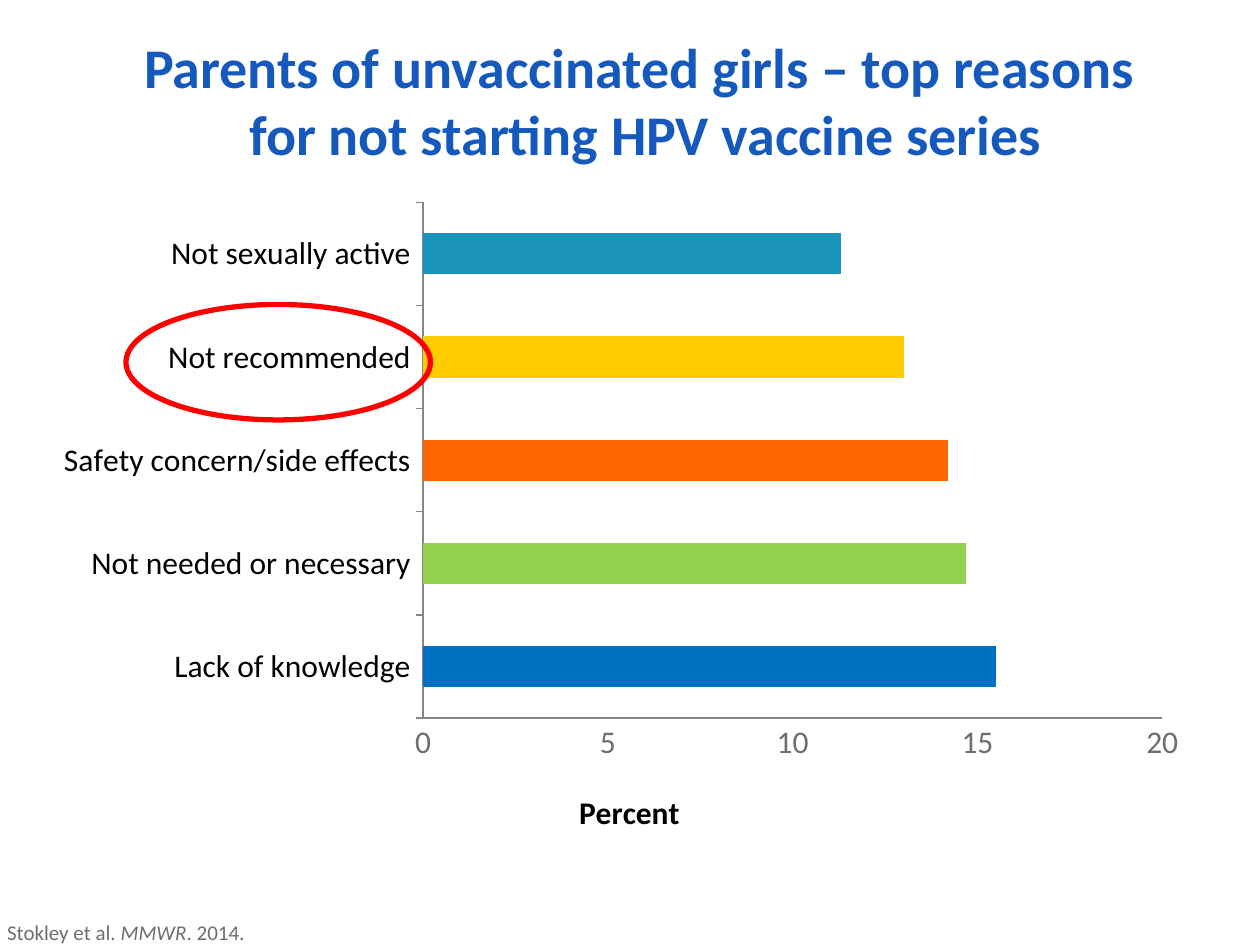
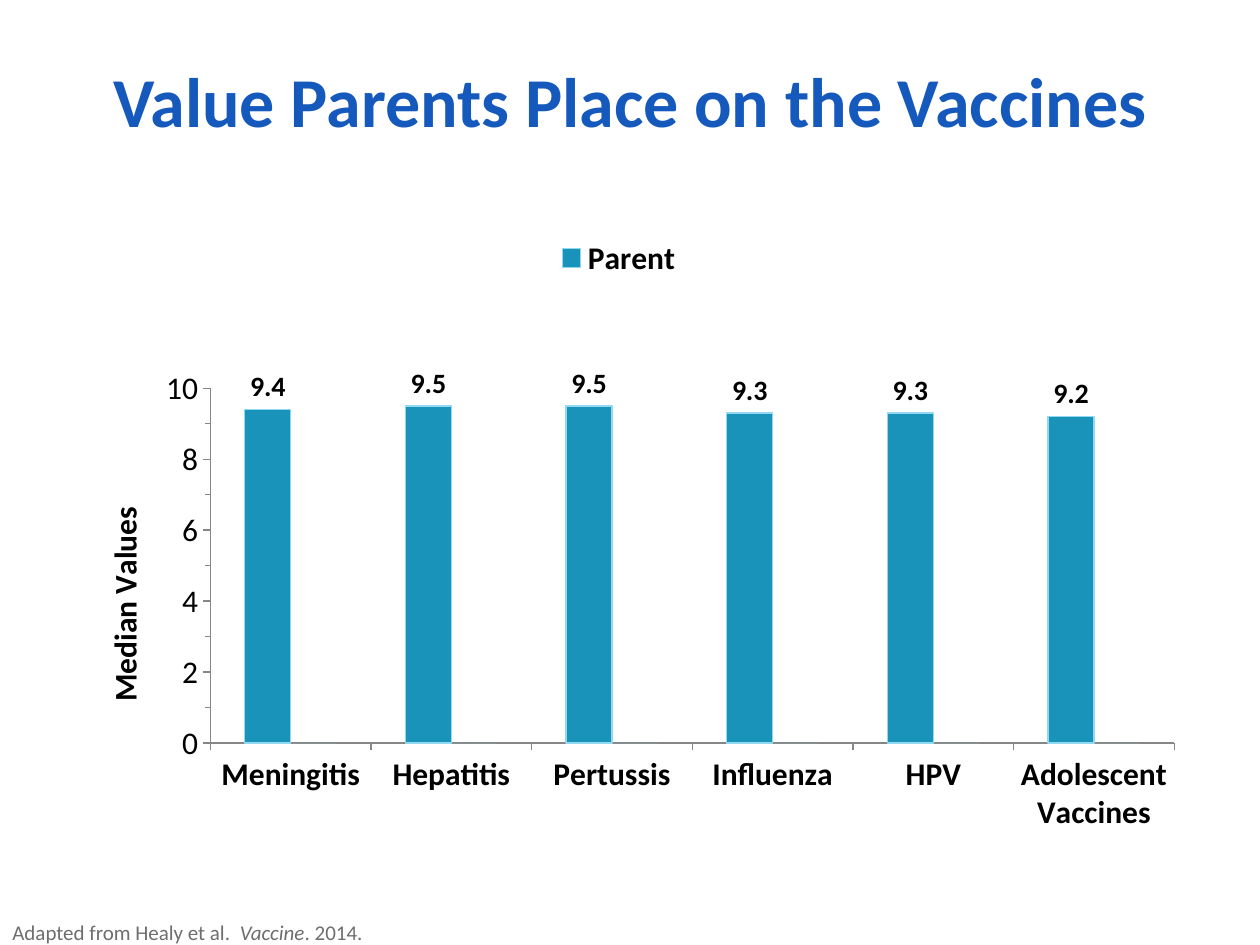
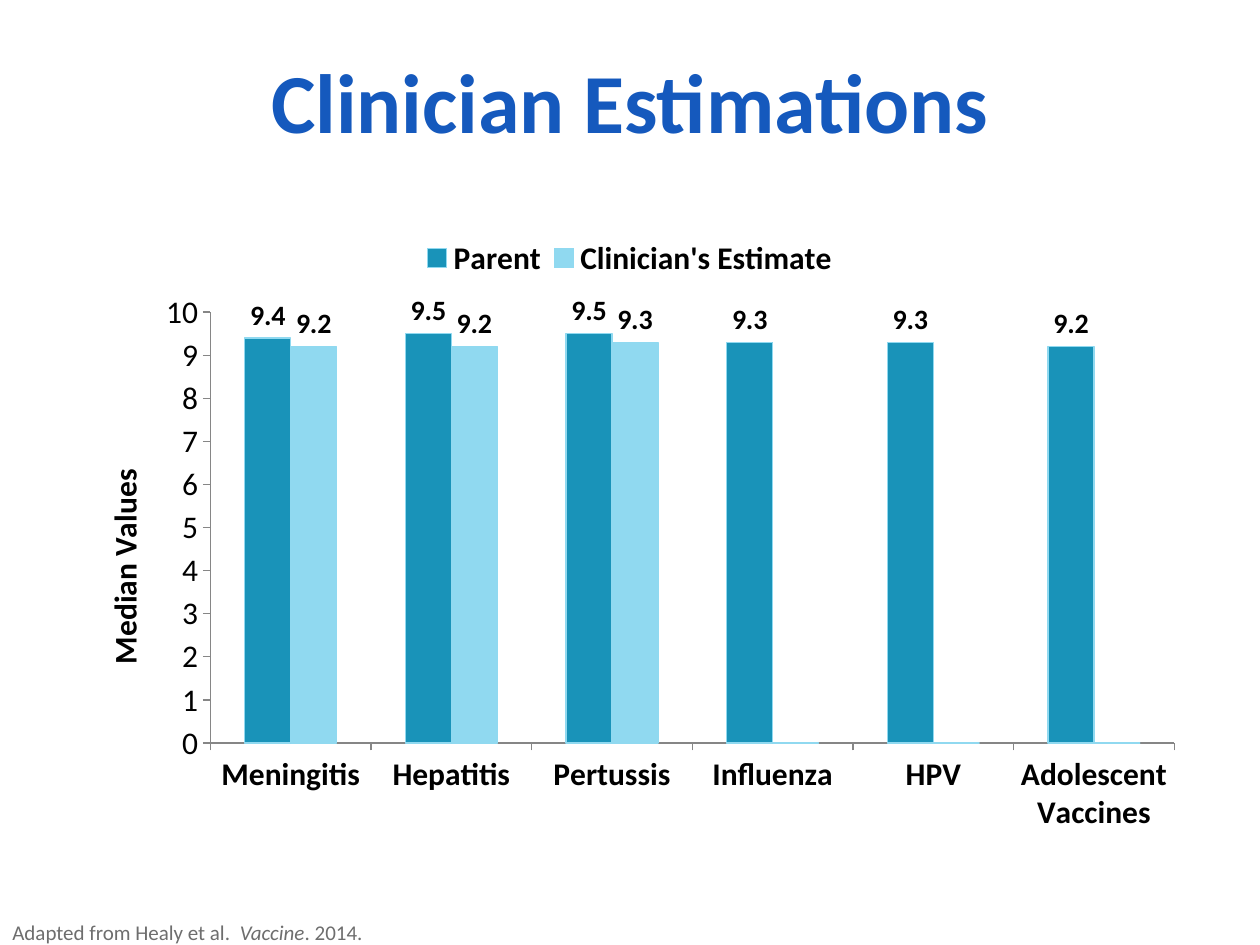
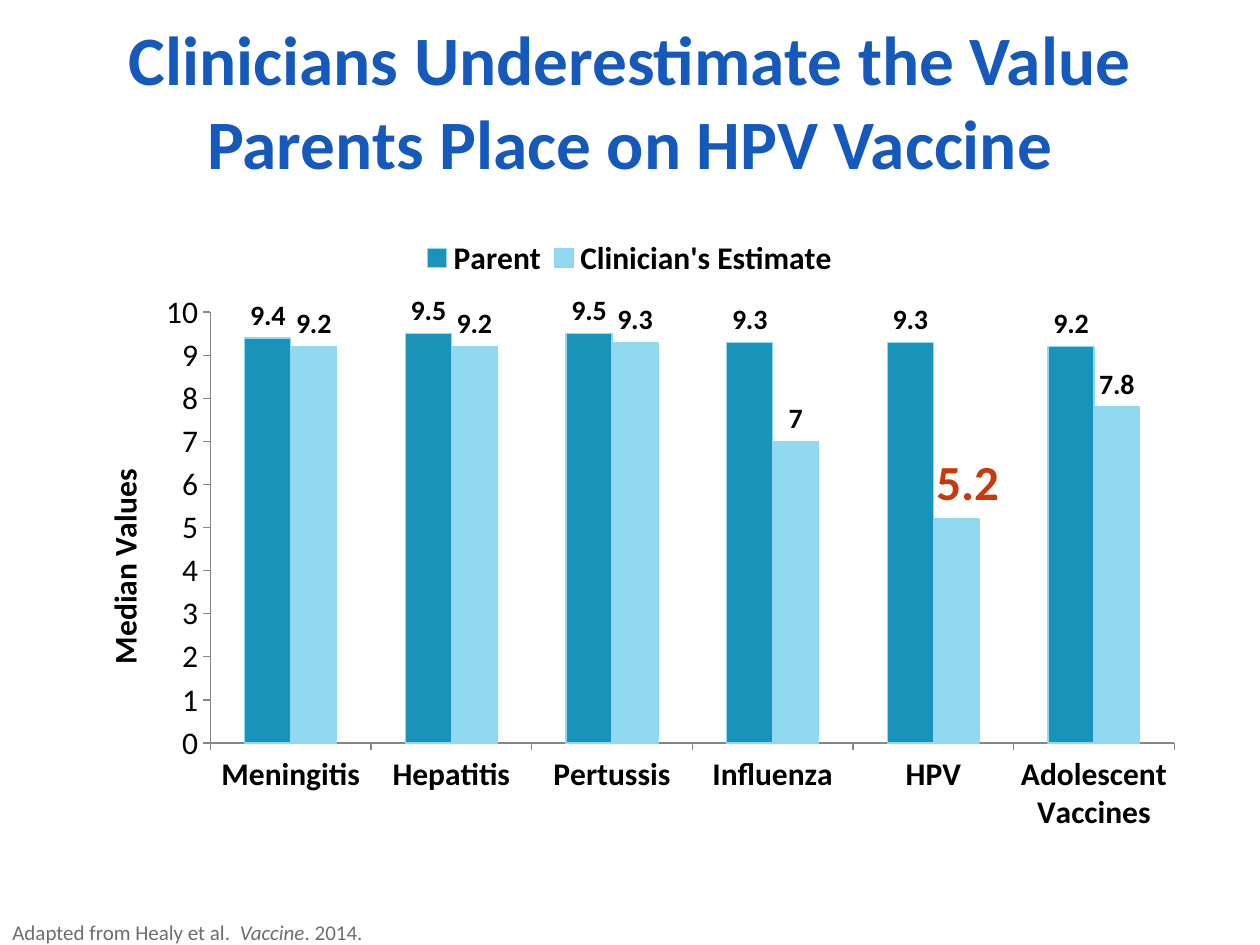
from lxml.etree import QName
from pptx import Presentation
from pptx.chart.data import CategoryChartData
from pptx.dml.color import RGBColor
from pptx.enum.chart import XL_CHART_TYPE, XL_LABEL_POSITION, XL_LEGEND_POSITION, XL_TICK_MARK
from pptx.enum.shapes import MSO_SHAPE
from pptx.enum.text import MSO_ANCHOR, PP_ALIGN
from pptx.oxml import parse_xml
from pptx.oxml.ns import nsdecls
from pptx.util import Pt

FONT = "Calibri"
COLORS = {
    "title": "1559BD",
    "text": "000000",
    "muted": "6E6E6E",
    "axis": "868686",
    "parent": "1993B9",
    "clinician": "90D9F0",
    "highlight": "FF0000",
    "low_value": "C8390B",
}
REASONS = [
    ("Lack of knowledge", 15.5, "0070C0"),
    ("Not needed or necessary", 14.7, "92D050"),
    ("Safety concern/side effects", 14.2, "FF6600"),
    ("Not recommended", 13, "FFCC00"),
    ("Not sexually active", 11.3, "1993B9"),
]
VACCINES = ["Meningitis", "Hepatitis", "Pertussis", "Influenza", "HPV", "Adolescent Vaccines"]
PARENT_VALUES = [9.4, 9.5, 9.5, 9.3, 9.3, 9.2]
HPV = VACCINES.index("HPV")
HEALY = ("Adapted from Healy et al.  ", "Vaccine", ". 2014.")


def rgb(name):
    return RGBColor.from_string(COLORS.get(name, name))


def style_font(font, size, color="text", bold=False, italic=False):
    font.name = FONT
    font.size = Pt(size)
    font.bold = bold
    font.italic = italic
    font.color.rgb = rgb(color)


def add_text_box(slide, left, top, width, height):
    box = slide.shapes.add_textbox(Pt(left), Pt(top), Pt(width), Pt(height))
    box.text_frame.word_wrap = True
    return box.text_frame


def add_title(slide, lines, size, left=36, width=648):
    frame = add_text_box(slide, left, 12, width, 90)
    frame.vertical_anchor = MSO_ANCHOR.MIDDLE
    paragraph = frame.paragraphs[0]
    paragraph.alignment = PP_ALIGN.CENTER
    for number, line in enumerate(lines):
        if number:
            paragraph.add_line_break()
        run = paragraph.add_run()
        run.text = line
        style_font(run.font, size, "title", bold=True)


def add_citation(slide, authors, journal, year, left=0, width=648):
    paragraph = add_text_box(slide, left, 522, width, 18).paragraphs[0]
    for text in (authors, journal, year):
        run = paragraph.add_run()
        run.text = text
        style_font(run.font, 12, "muted", italic=text == journal)


def set_layout(element, x, y, width=None, height=None, inner=False, offset=False):
    """Place a chart part by fractions of the chart; offset moves it from its usual place."""
    for old in element.findall("{*}layout"):
        element.remove(old)
    parts = '<c:layoutTarget val="inner"/>' if inner else ""
    if not offset:
        parts += '<c:xMode val="edge"/><c:yMode val="edge"/>'
    for tag, value in (("x", x), ("y", y), ("w", width), ("h", height)):
        if value is not None:
            parts += f'<c:{tag} val="{value}"/>'
    layout = parse_xml(
        f'<c:layout {nsdecls("c")}><c:manualLayout>{parts}</c:manualLayout></c:layout>')
    earlier = {"idx", "tx", "legendPos", "legendEntry"}
    element.insert(sum(QName(child).localname in earlier for child in element), layout)


def style_axis(axis, tick, color="text", bold=False):
    axis.has_major_gridlines = False
    axis.major_tick_mark = tick
    axis.minor_tick_mark = XL_TICK_MARK.NONE
    axis.format.line.color.rgb = rgb("axis")
    axis.format.line.width = Pt(0.75)
    style_font(axis.tick_labels.font, 18, color, bold)


def add_axis_title(axis, text, x, y, vertical=False):
    frame = axis.axis_title.text_frame
    frame._txBody.bodyPr.set("rot", "-5400000" if vertical else "0")
    run = frame.paragraphs[0].add_run()
    run.text = text
    style_font(run.font, 18, bold=True)
    set_layout(axis.axis_title._element, x, y)


def add_chart(slide, kind, box, categories, series, plot_box):
    data = CategoryChartData()
    data.categories = categories
    for name, values in series:
        data.add_series(name, values)
    chart = slide.shapes.add_chart(kind, *map(Pt, box), data).chart
    chart.has_title = False
    chart.has_legend = False
    style_font(chart.font, 18)
    plot = chart.plots[0]
    plot.gap_width = 150
    plot.overlap = 0
    plot.vary_by_categories = False
    set_layout(chart._chartSpace.chart.plotArea, *plot_box, inner=True)
    return chart


def add_reasons_chart(slide):
    names, values, colors = zip(*REASONS)
    chart = add_chart(slide, XL_CHART_TYPE.BAR_CLUSTERED, (24, 108, 660, 378),
                      names, [("Series 1", values)], (0.33, 0.02, 0.64, 0.78))
    for number, color in enumerate(colors):
        fill = chart.series[0].points[number].format.fill
        fill.solid()
        fill.fore_color.rgb = rgb(color)
    style_axis(chart.category_axis, XL_TICK_MARK.OUTSIDE)
    axis = chart.value_axis
    style_axis(axis, XL_TICK_MARK.NONE, "muted")
    axis.minimum_scale, axis.maximum_scale, axis.major_unit = 0, 20, 5
    add_axis_title(axis, "Percent", 0.46, 0.9)


def add_value_labels(series):
    labels = series.data_labels
    labels.show_value = True
    labels.position = XL_LABEL_POSITION.OUTSIDE_END
    style_font(labels.font, 16, bold=True)
    blanks = [number for number, value in enumerate(series.values) if value == 0]
    for place, number in enumerate(blanks):
        labels._element.insert(place, parse_xml(
            f'<c:dLbl {nsdecls("c")}><c:idx val="{number}"/><c:delete val="1"/></c:dLbl>'))


def add_legend(chart, x, width):
    chart.has_legend = True
    legend = chart.legend
    legend.position = XL_LEGEND_POSITION.TOP
    legend.include_in_layout = False
    style_font(legend.font, 18, bold=True)
    set_layout(legend._element, x, 0.03, width, 0.06)


def add_value_chart(slide, clinician_name, clinician_values, plot_top, major_unit, title_top):
    chart = add_chart(
        slide, XL_CHART_TYPE.COLUMN_CLUSTERED, (36, 126, 648, 356.4), VACCINES,
        [("Parent", PARENT_VALUES), (clinician_name, clinician_values)],
        (0.13, plot_top, 0.85, round(0.838 - plot_top, 3)))
    for series, color in zip(chart.series, ("parent", "clinician")):
        series.format.fill.solid()
        series.format.fill.fore_color.rgb = rgb(color)
        if any(series.values):
            series.format.line.color.rgb = rgb("clinician")
            series.format.line.width = Pt(0.75)
        add_value_labels(series)
    style_axis(chart.category_axis, XL_TICK_MARK.OUTSIDE, bold=True)
    axis = chart.value_axis
    style_axis(axis, XL_TICK_MARK.OUTSIDE)
    axis.minimum_scale, axis.maximum_scale, axis.major_unit = 0, 10, major_unit
    add_axis_title(axis, "Median Values", 0.03, title_top, vertical=True)
    return chart


def add_parent_chart(slide):
    chart = add_value_chart(slide, "Provider's estimate", [0] * len(VACCINES), 0.269, 2, 0.45)
    chart.value_axis.minor_tick_mark = XL_TICK_MARK.OUTSIDE
    chart.value_axis.minor_unit = 1
    add_legend(chart, 0.43, 0.12)
    chart.legend._element.insert(1, parse_xml(
        f'<c:legendEntry {nsdecls("c")}><c:idx val="1"/><c:delete val="1"/></c:legendEntry>'))


def add_comparison_chart(slide, clinician_values):
    chart = add_value_chart(slide, "Clinician's Estimate", clinician_values, 0.147, 1, 0.39)
    add_legend(chart, 0.31, 0.38)
    return chart


def emphasize_label(series, number):
    label = series.points[number].data_label
    style_font(label.font, 28, "low_value", bold=True)
    label.position = XL_LABEL_POSITION.OUTSIDE_END
    set_layout(series.data_labels._element.find("{*}dLbl"), 0.01, 0, offset=True)


def add_highlight_ellipse(slide):
    ellipse = slide.shapes.add_shape(MSO_SHAPE.OVAL, Pt(72), Pt(174), Pt(174), Pt(66))
    ellipse.shadow.inherit = False
    ellipse.fill.background()
    ellipse.line.color.rgb = rgb("highlight")
    ellipse.line.width = Pt(3)


def main():
    presentation = Presentation()
    presentation.slide_width, presentation.slide_height = Pt(720), Pt(540)
    blank = presentation.slide_layouts[6]
    reasons, parents, estimates, comparison = [
        presentation.slides.add_slide(blank) for _ in range(4)]

    add_title(reasons, ["Parents of unvaccinated girls – top reasons ",
                        "for not starting HPV vaccine series"], 32, width=666)
    add_reasons_chart(reasons)
    add_highlight_ellipse(reasons)
    add_citation(reasons, "Stokley et al. ", "MMWR", ". 2014.", left=-3, width=222)

    add_title(parents, ["Value Parents Place on the Vaccines"], 40)
    add_parent_chart(parents)

    add_title(estimates, ["Clinician Estimations"], 48, left=0, width=720)
    add_comparison_chart(estimates, [9.2, 9.2, 9.3, 0, 0, 0])

    add_title(comparison, ["Clinicians Underestimate the Value Parents Place on HPV Vaccine"], 39.6)
    chart = add_comparison_chart(comparison, [9.2, 9.2, 9.3, 7, 5.2, 7.8])
    emphasize_label(chart.series[1], HPV)

    for slide in (parents, estimates, comparison):
        add_citation(slide, *HEALY)
    presentation.save("out.pptx")


if __name__ == "__main__":
    main()
